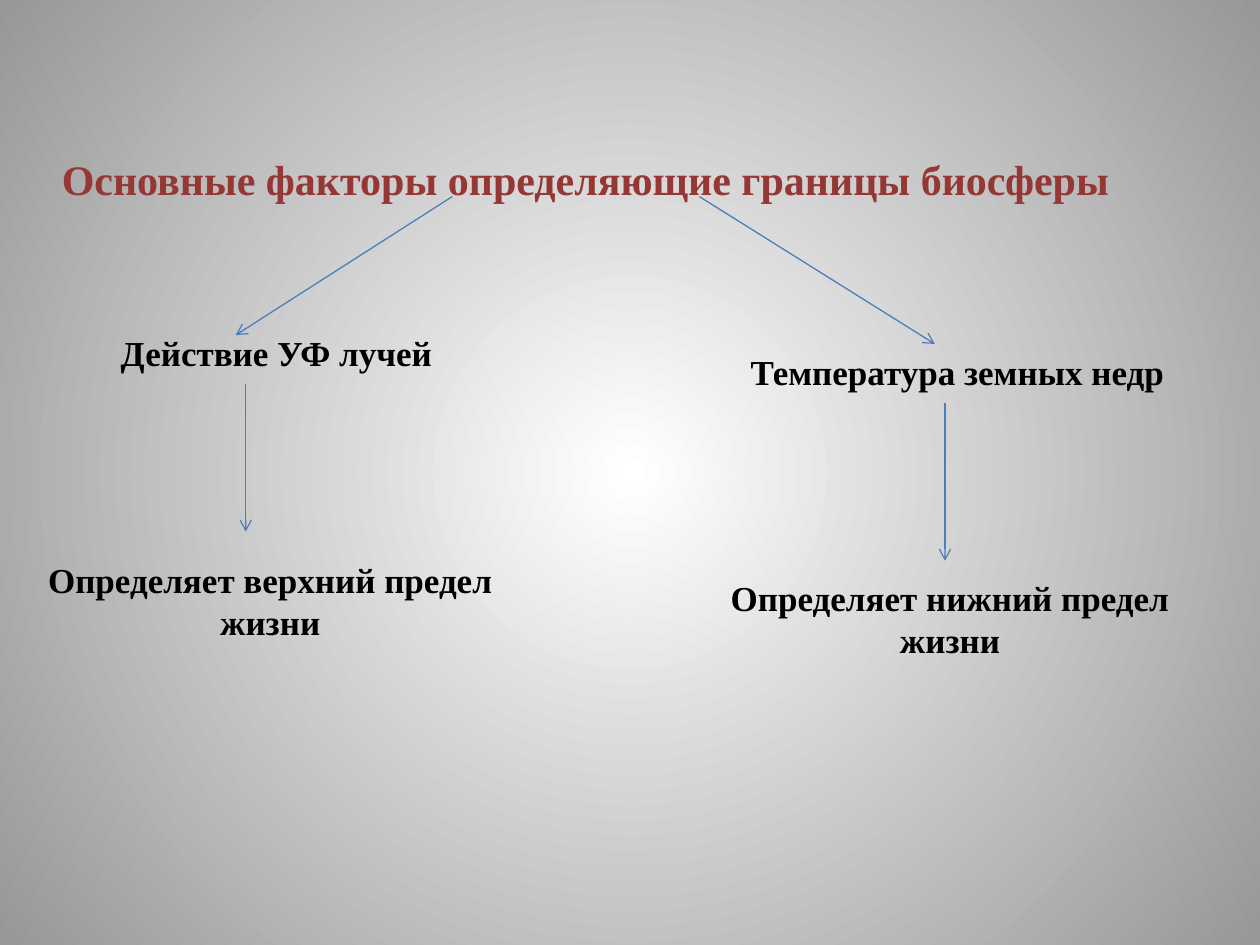
"""Build a slide on the factors that set the limits of the biosphere."""
from lxml.etree import SubElement as Sub
from pptx import Presentation
from pptx.dml.color import RGBColor as RGB
from pptx.enum.shapes import MSO_CONNECTOR as Link
from pptx.enum.text import MSO_ANCHOR as Anchor, MSO_AUTO_SIZE as Fit, PP_ALIGN as Align
from pptx.oxml.ns import qn
from pptx.util import Inches, Pt

COLORS = {"mid": "FFFFFF", "edge": "979797", "title": "953735", "text": "000000", "line": "4B7EBC"}


def write(box, text, size, color, align):
    frame = box.text_frame
    frame.text = text
    frame.word_wrap = True
    frame.auto_size = Fit.SHAPE_TO_FIT_TEXT
    frame.vertical_anchor = Anchor.TOP
    par = frame.paragraphs[0]
    par.alignment = align
    font = par.runs[0].font
    look = {"name": "Times New Roman", "size": Pt(size), "bold": True}
    for key, value in look.items():
        setattr(font, key, value)
    font.color.rgb = RGB.from_string(COLORS[color])


deck = Presentation()
deck.slide_width, deck.slide_height = Inches(10), Inches(7.5)
slide = deck.slides.add_slide(deck.slide_layouts[5])

fill = slide.background.fill
fill.gradient()
for stop, name, place in zip(fill.gradient_stops, ("mid", "edge"), (0, 1)):
    stop.color.rgb = RGB.from_string(COLORS[name])
    stop.position = place
grad = next(slide.background._cSld.iter(qn("a:gradFill")))
grad.remove(grad.find(qn("a:lin")))
round_ = Sub(grad, qn("a:path"), {"path": "circle"})
Sub(round_, qn("a:fillToRect"), dict.fromkeys("ltrb", "50000"))

title = slide.shapes.title
spot = {"left": 0.39, "top": 1.17, "width": 9.61, "height": 0.5}
for key, value in spot.items():
    setattr(title, key, Inches(value))
write(title, "Основные факторы определяющие границы биосферы", 24, "title", Align.LEFT)

labels = [
    ("Действие УФ лучей", 0.86, 2.58, 2.89, 0.44, Align.LEFT),
    ("Температура земных недр", 5.86, 2.73, 3.75, 0.44, Align.LEFT),
    ("Определяет верхний предел жизни", 0.23, 4.38, 3.83, 0.77, Align.CENTER),
    ("Определяет нижний предел жизни", 5.47, 4.53, 4.14, 0.77, Align.CENTER),
]
for text, left, top, width, height, align in labels:
    box = slide.shapes.add_textbox(*map(Inches, (left, top, width, height)))
    write(box, text, 20, "text", align)

arrows = [
    (5.55, 1.56, 7.42, 2.73),
    (3.59, 1.56, 1.87, 2.66),
    (1.95, 3.05, 1.95, 4.22),
    (7.5, 3.2, 7.5, 4.45),
]
for ends in arrows:
    arrow = slide.shapes.add_connector(Link.STRAIGHT, *map(Inches, ends))
    arrow.line.width = Pt(0.75)
    arrow.line.color.rgb = RGB.from_string(COLORS["line"])
    Sub(arrow.line._get_or_add_ln(), qn("a:tailEnd"), {"type": "arrow"})
    Sub(arrow._element.spPr, qn("a:effectLst"))

deck.save("out.pptx")
